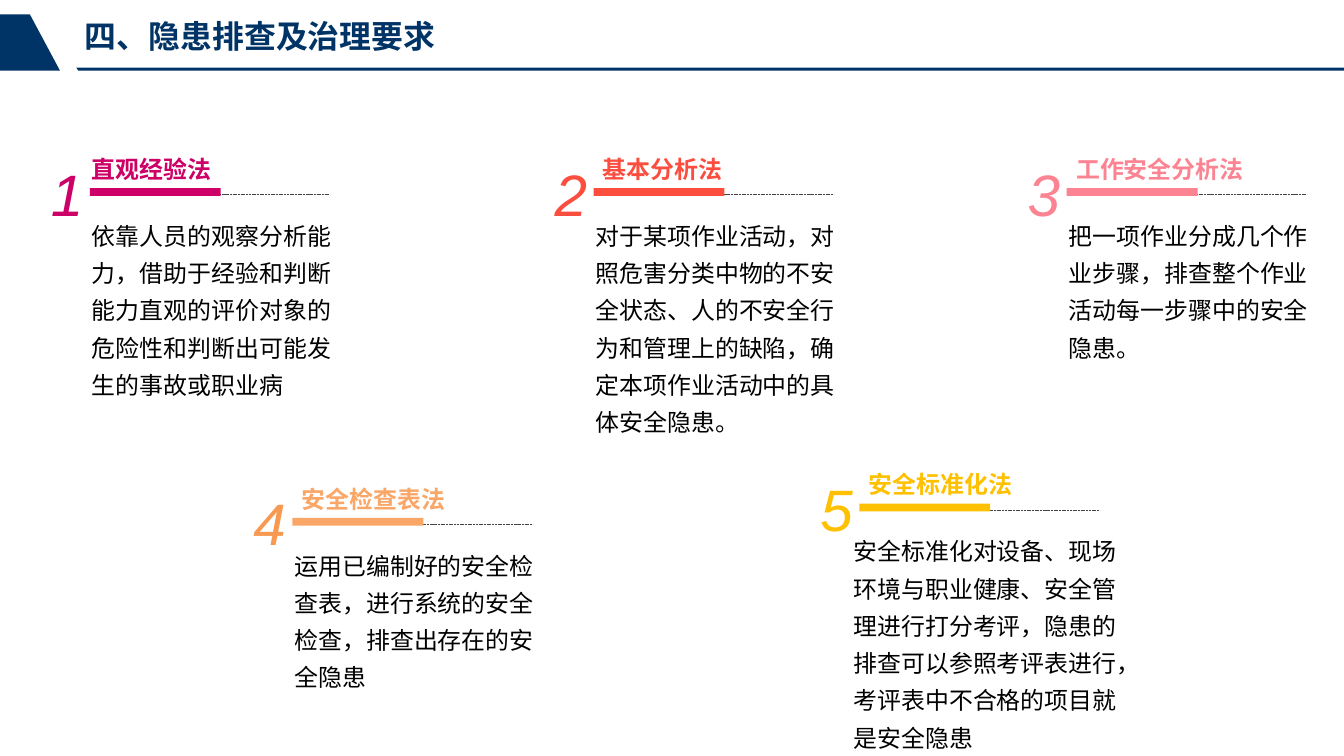
from pptx import Presentation
from pptx.dml.color import RGBColor
from pptx.enum.dml import MSO_LINE
from pptx.enum.shapes import MSO_CONNECTOR, MSO_SHAPE
from pptx.enum.text import MSO_AUTO_SIZE
from pptx.oxml.ns import qn
from pptx.util import Pt
from lxml.etree import SubElement

WIDTH, HEIGHT = 1012.3, 569.5
NAVY, BLACK, GREY = "003366", "000000", "434547"

METHODS = [
    ("1", "直观经验法", "CC0066", "CC0066", 67.7, 141.8, -5.5, -5.5, 206,
     "依靠人员的观察分析能力，借助于经验和判断能力直观的评价对象的危险性和判断出可能发生的事故或职业病"),
    ("2", "基本分析法", "FB4E3F", "FB4E3F", 447.1, 141.8, 0, -5.5, 206,
     "对于某项作业活动，对照危害分类中物的不安全状态、人的不安全行为和管理上的缺陷，确定本项作业活动中的具体安全隐患。"),
    ("3", "工作安全分析法", "FC8492", "FC8492", 803.5, 141.8, 0, -5.5, 206,
     "把一项作业分成几个作业步骤，排查整个作业活动每一步骤中的安全隐患。"),
    ("4", "安全检查表法", "F9A667", "F89952", 220.3, 390.2, 0, -5.5, 206,
     "运用已编制好的安全检查表，进行系统的安全检查，排查出存在的安全隐患"),
    ("5", "安全标准化法", "FFC000", "FFC000", 647.3, 379.4, 0, -11.5, 217.4,
     "安全标准化对设备、现场环境与职业健康、安全管理进行打分考评，隐患的排查可以参照考评表进行，考评表中不合格的项目就是安全隐患"),
]


def rgb(color):
    """Turn a hex string into a colour."""
    return RGBColor.from_string(color)


def style(sp, color):
    """Give a shape a plain fill without line or shadow."""
    sp.shadow.inherit = False
    sp.fill.solid()
    sp.fill.fore_color.rgb = rgb(color)
    sp.line.fill.background()


def add_outline(s, points, color):
    """Add a filled polygon through the given points."""
    pts = [(Pt(x), Pt(y)) for x, y in points]
    fb = s.shapes.build_freeform(*pts[0])
    fb.add_line_segments(pts[1:], close=True)
    style(fb.convert_to_shape(), color)


def add_bar(s, x, y, w, h, color):
    """Add a filled rectangle."""
    sp = s.shapes.add_shape(MSO_SHAPE.RECTANGLE, Pt(x), Pt(y), Pt(w), Pt(h))
    style(sp, color)


def add_dashes(s, x1, x2, y):
    """Add a thin dashed horizontal line."""
    sp = s.shapes.add_connector(MSO_CONNECTOR.STRAIGHT, Pt(x1), Pt(y), Pt(x2), Pt(y))
    sp.line.color.rgb = rgb(GREY)
    sp.line.width = Pt(0.5)
    sp.line.dash_style = MSO_LINE.SQUARE_DOT
    SubElement(sp._element.spPr, qn("a:effectLst"))


def add_text(s, x, y, w, h, text, size, color, bold=False, italic=False,
             spacing=None, wrap=True, grow=True):
    """Add a one-run text box and return its frame."""
    tf = s.shapes.add_textbox(Pt(x), Pt(y), Pt(w), Pt(h)).text_frame
    tf.word_wrap = wrap
    tf.auto_size = MSO_AUTO_SIZE.SHAPE_TO_FIT_TEXT if grow else MSO_AUTO_SIZE.NONE
    p = tf.paragraphs[0]
    if spacing:
        p.line_spacing = spacing
    r = p.add_run()
    r.text = text
    r.font.name = "Arial"
    r.font.size = Pt(size)
    r.font.bold = bold
    r.font.italic = italic
    r.font.color.rgb = rgb(color)
    return tf


def add_header(s):
    """Add the slide title with its corner block and rule."""
    add_outline(s, [(57.6, 51), (WIDTH, 51), (WIDTH, 53.3), (59, 53.3)], NAVY)
    add_outline(s, [(22.5, 10.8), (45.2, 53.3), (0, 53.3), (0, 10.8)], NAVY)
    tf = add_text(s, 64, 12.2, 329, 28.8, "四、隐患排查及治理要求", 24, NAVY, bold=True)
    tf.margin_left = tf.margin_right = tf.margin_top = tf.margin_bottom = 0
    tf.paragraphs[0].space_after = Pt(6)


def add_method(s, number, name, color, number_color, x, y, name_dx, body_dx, body_w, body):
    """Add one numbered method, placed around its coloured bar."""
    add_dashes(s, x + 56.5, x + 181, y + 4.8)
    add_bar(s, x, y, 98.6, 5.8, color)
    add_text(s, x + body_dx, y + 15.1, body_w, 102, body, 18, BLACK, spacing=1.3, grow=False)
    add_text(s, x - 36.5, y - 42.3, 22.3, 69.8, number, 44, number_color,
             italic=True, spacing=1.3)
    add_text(s, x + name_dx, y - 28.8, 18 * len(name) + 15, 28.8, name, 18, color,
             bold=True, wrap=False)


def main():
    """Build the slide and save it."""
    prs = Presentation()
    prs.slide_width, prs.slide_height = Pt(WIDTH), Pt(HEIGHT)
    s = prs.slides.add_slide(prs.slide_layouts[6])
    add_header(s)
    for method in METHODS:
        add_method(s, *method)
    prs.save("out.pptx")


if __name__ == "__main__":
    main()
